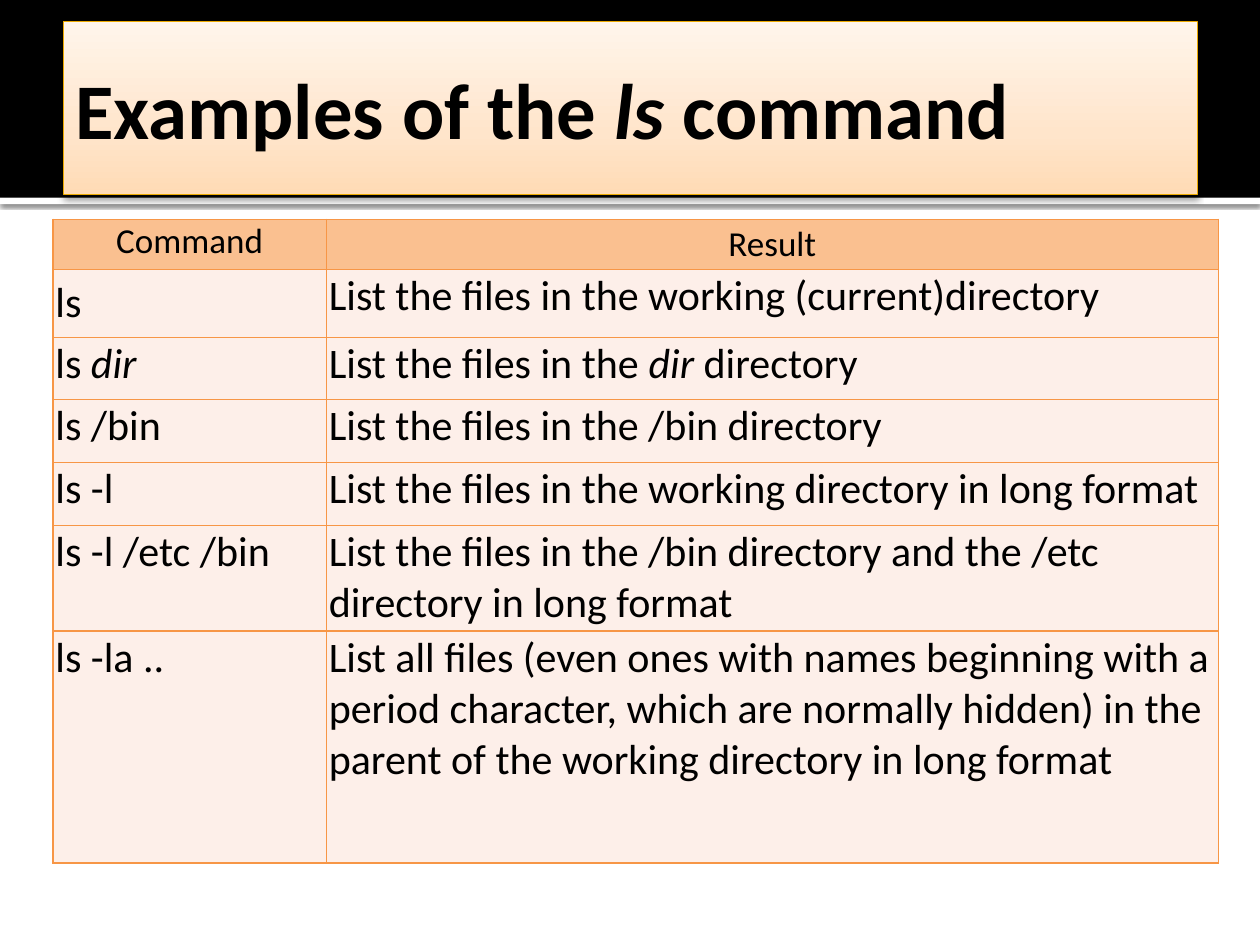
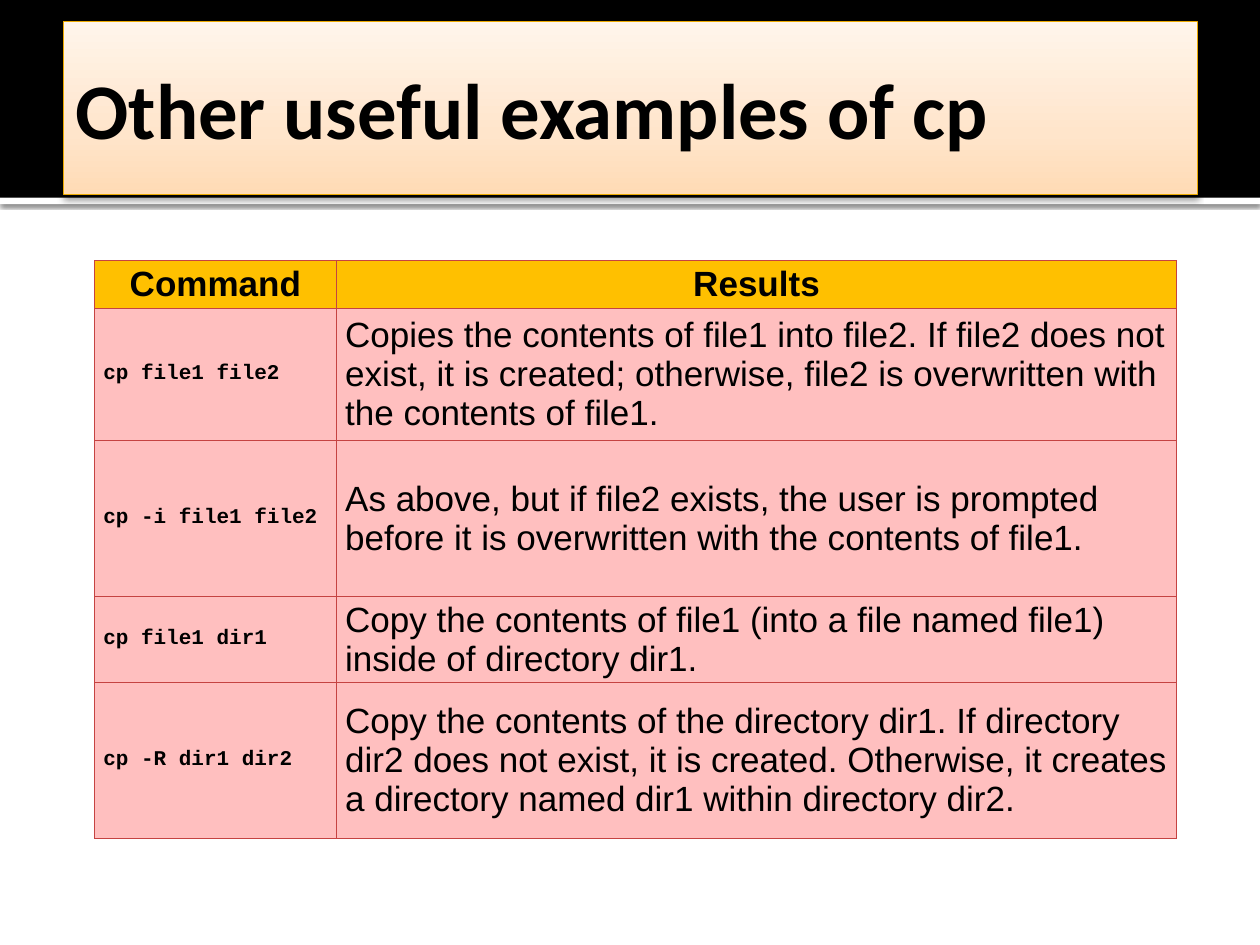
"""Build two slides that list examples of the ls and cp commands."""
from dataclasses import dataclass
from typing import NamedTuple

from lxml import etree
from pptx import Presentation
from pptx import util as u
from pptx.dml.color import RGBColor
from pptx.enum import shapes, text
from pptx.oxml import parse_xml
from pptx.oxml.ns import nsdecls, qn

TOP, MIDDLE = text.MSO_ANCHOR.TOP, text.MSO_ANCHOR.MIDDLE
LEFT, CENTER = text.PP_ALIGN.LEFT, text.PP_ALIGN.CENTER
WIDTH, HEIGHT = u.Inches(10), u.Inches(7.5)


class Box(NamedTuple):
    """Place and size in percent of the slide."""
    left: float
    top: float
    width: float
    height: float

    def lengths(self) -> list[int]:
        return [round(share * side / 100)
                for share, side in zip(self, (WIDTH, HEIGHT, WIDTH, HEIGHT))]


class Shadow(NamedTuple):
    """Downward shadow with opacity in percent, blur and distance in points."""
    opacity: int
    blur: float
    distance: float


class Type(NamedTuple):
    """Font, size and weight of a piece of text."""
    font: str
    size: int
    bold: bool = False


class Band(NamedTuple):
    """Full-width bar behind the title."""
    box: Box
    color: str
    shadow: Shadow | None = None


@dataclass(frozen=True)
class TableStyle:
    """Colours, type, margins and anchors of a command table."""
    header_fill: str
    body_fill: str
    border: str
    border_width: float
    header: Type
    command: Type
    result: Type
    margin_x: float
    margin_y: float
    anchor: text.MSO_ANCHOR
    raised_anchors: tuple[tuple[int, int], ...] = ()


@dataclass(frozen=True)
class Theme:
    """Shared colours, type and table styles."""
    ink: str = "000000"
    title: Type = Type("Calibri", 45, True)
    title_box: Box = Box(5, 2.27, 90, 18.27)
    title_line: str = "EBA900"
    title_stops: tuple[tuple[int, str], ...] = (
        (0, "FFDBB5"), (35, "FFE5CB"), (100, "FFF5EB"))
    title_shadow: Shadow = Shadow(38, 3.5, 2)
    bands: tuple[Band, ...] = (
        Band(Box(0, 20.93, 100, 0.67), "FFFFFF", Shadow(60, 2.5, 0.8)),
        Band(Box(0, 0, 100, 20.93), "000000"))
    orange: TableStyle = TableStyle(
        "FAC090", "FDEFE9", "F79646", 1, Type("Calibri", 20),
        Type("Calibri", 24), Type("Calibri", 24), 0.02, 0.01, TOP,
        ((0, 1), (1, 0)))
    pink: TableStyle = TableStyle(
        "FFC000", "FFBFBF", "C54342", 0.5, Type("Arial", 20, True),
        Type("Courier New", 12, True), Type("Arial", 20), 0.07, 0.03, MIDDLE)


@dataclass(frozen=True)
class CommandSlide:
    """Title and table of one slide; asterisks enclose italic words."""
    title: str
    style: TableStyle
    left: float
    top: float
    columns: tuple[float, float]
    heights: tuple[float, ...]
    rows: tuple[tuple[str, str], ...]


THEME = Theme()

SLIDES = (
    CommandSlide(
        "Examples of the *ls* command", THEME.orange, 4.2, 23.2, (21.7, 70.8),
        (5.33, 7.2, 6.53, 6.67, 6.67, 11.2, 24.53),
        (("Command", "Result"),
         ("ls", "List the files in the working (current)directory"),
         ("ls *dir*", "List the files in the *dir* directory"),
         ("ls /bin", "List the files in the /bin directory"),
         ("ls -l", "List the files in the working directory in long format"),
         ("ls -l /etc /bin", "List the files in the /bin directory and the "
          "/etc directory in long format"),
         ("ls -la ..", "List all files (even ones with names beginning with "
          "a period character, which are normally hidden) in the parent of "
          "the working directory in long format"))),
    CommandSlide(
        "Other useful examples of cp", THEME.pink, 7.5, 27.6, (19.2, 66.7),
        (5, 14, 16.53, 9.07, 16.53),
        (("Command", "Results"),
         ("cp file1 file2", "Copies the contents of file1 into file2. If "
          "file2 does not exist, it is created; otherwise, file2 is "
          "overwritten with the contents of file1."),
         ("cp -i file1 file2", "As above, but if file2 exists, the user is "
          "prompted before it is overwritten with the contents of file1."),
         ("cp file1 dir1", "Copy the contents of file1 (into a file named "
          "file1) inside of directory dir1."),
         ("cp -R dir1 dir2", "Copy the contents of the directory dir1. If "
          "directory dir2 does not exist, it is created. Otherwise, it "
          "creates a directory named dir1 within directory dir2."))),
)


def rgb(color: str) -> RGBColor:
    """Return a colour from its hex digits."""
    return RGBColor.from_string(color)


def write(frame, content: str, style: Type, alignment) -> None:
    """Write one paragraph, setting the words between asterisks in italics."""
    paragraph = frame.paragraphs[0]
    paragraph.alignment = alignment
    for index, part in enumerate(content.split("*")):
        run = paragraph.add_run()
        run.text = part
        run.font.name, run.font.size = style.font, u.Pt(style.size)
        run.font.bold, run.font.italic = style.bold, index % 2 == 1
        run.font.color.rgb = rgb(THEME.ink)


def set_shadow(shape, shadow: Shadow | None) -> None:
    """Replace the inherited shadow by the given one, if any."""
    shape.shadow.inherit = False
    if shadow:
        effects = shape.element.spPr.find(qn("a:effectLst"))
        effects.append(parse_xml(
            f'<a:outerShdw {nsdecls("a")} blurRad="{u.Pt(shadow.blur)}" '
            f'dist="{u.Pt(shadow.distance)}" dir="5400000" rotWithShape="0">'
            f'<a:srgbClr val="000000"><a:alpha val="{shadow.opacity * 1000}"/>'
            '</a:srgbClr></a:outerShdw>'))


def add_band(slide, band: Band) -> None:
    """Draw a bar behind the title."""
    shape = slide.shapes.add_shape(shapes.MSO_SHAPE.RECTANGLE, *band.box.lengths())
    shape.fill.solid()
    shape.fill.fore_color.rgb = rgb(band.color)
    shape.line.fill.background()
    set_shadow(shape, band.shadow)
    slide.shapes.title.element.addprevious(shape.element)


def format_title(title, content: str) -> None:
    """Place the title on its gradient panel and fill in its text."""
    title.left, title.top, title.width, title.height = THEME.title_box.lengths()
    title.fill.gradient()
    title.fill.gradient_angle = 90
    stops = title.element.spPr.find(f".//{qn('a:gsLst')}")
    for stop in list(stops):
        stops.remove(stop)
    for position, color in THEME.title_stops:
        stop = etree.SubElement(stops, qn("a:gs"), pos=str(position * 1000))
        etree.SubElement(stop, qn("a:srgbClr"), val=color)
    title.line.color.rgb = rgb(THEME.title_line)
    title.line.width = u.Pt(0.5)
    set_shadow(title, THEME.title_shadow)
    frame = title.text_frame
    frame.auto_size, frame.word_wrap = text.MSO_AUTO_SIZE.NONE, True
    frame.vertical_anchor = MIDDLE
    frame.margin_left = u.Inches(0.1)
    frame.margin_top = frame.margin_right = frame.margin_bottom = u.Inches(0.05)
    write(frame, content, THEME.title, LEFT)


def set_borders(cell, color: str, width: float) -> None:
    """Give a cell the same line on all four sides."""
    properties = cell._tc.get_or_add_tcPr()
    for index, side in enumerate("LRTB"):
        properties.insert(index, parse_xml(
            f'<a:ln{side} {nsdecls("a")} w="{u.Pt(width)}"><a:solidFill>'
            f'<a:srgbClr val="{color}"/></a:solidFill></a:ln{side}>'))


def add_command_table(slide, content: CommandSlide) -> None:
    """Draw the table of commands and results."""
    style = content.style
    box = Box(content.left, content.top, sum(content.columns), sum(content.heights))
    table = slide.shapes.add_table(
        len(content.rows), len(content.columns), *box.lengths()).table
    for column, share in zip(table.columns, content.columns):
        column.width = round(WIDTH * share / 100)
    for row, share in zip(table.rows, content.heights):
        row.height = round(HEIGHT * share / 100)
    for row_index, row in enumerate(content.rows):
        for column_index, words in enumerate(row):
            cell = table.cell(row_index, column_index)
            is_header = row_index == 0
            cell.margin_left = cell.margin_right = u.Inches(style.margin_x)
            cell.margin_top = cell.margin_bottom = u.Inches(style.margin_y)
            is_raised = (row_index, column_index) in style.raised_anchors
            cell.vertical_anchor = MIDDLE if is_raised else style.anchor
            cell.fill.solid()
            cell.fill.fore_color.rgb = rgb(
                style.header_fill if is_header else style.body_fill)
            set_borders(cell, style.border, style.border_width)
            body = (style.command, style.result)[column_index]
            write(cell.text_frame, words, style.header if is_header else body,
                  CENTER if is_header else LEFT)


def main() -> None:
    """Build and save the presentation."""
    presentation = Presentation()
    presentation.slide_width, presentation.slide_height = WIDTH, HEIGHT
    for content in SLIDES:
        slide = presentation.slides.add_slide(presentation.slide_layouts[5])
        for band in THEME.bands:
            add_band(slide, band)
        format_title(slide.shapes.title, content.title)
        add_command_table(slide, content)
    presentation.save("out.pptx")


if __name__ == "__main__":
    main()
